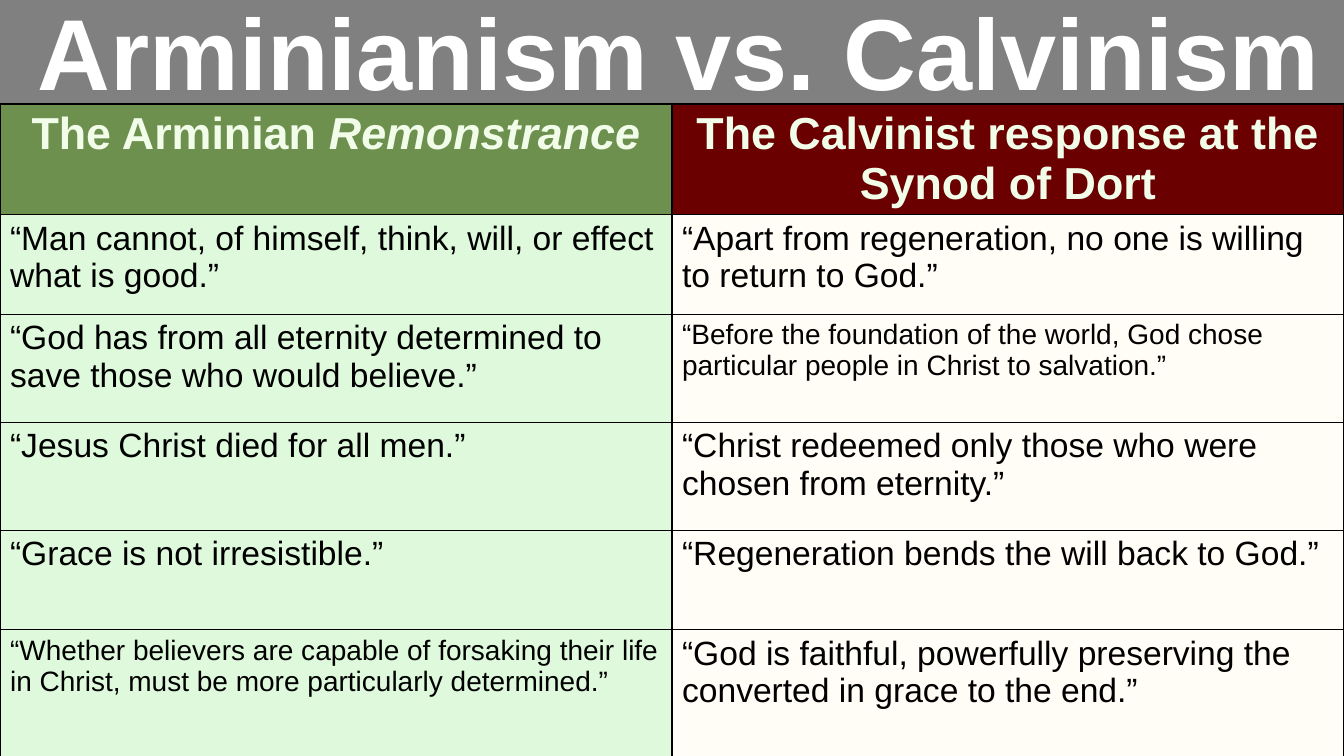
from dataclasses import dataclass

from lxml import etree
from pptx import Presentation
from pptx.dml.color import RGBColor
from pptx.enum import text
from pptx.oxml import ns
from pptx.util import Cm, Pt


@dataclass(frozen=True)
class Theme:
    font: str = "Arial"
    background: str = "808080"
    title_color: str = "FFFFFF"
    header_color: str = "F1FDE9"
    body_color: str = "000000"
    border_color: str = "000000"
    header_fills: tuple[str, str] = ("6D904E", "6B0000")
    body_fills: tuple[str, str] = ("DEF9DB", "FFFDF5")
    title_size: float = 72
    header_size: float = 32
    body_size: float = 24
    small_size: float = 20
    outer_border: float = 2.25
    inner_border: float = 1


@dataclass(frozen=True)
class Statement:
    words: str
    size: float
    emphasis: str = ""  # closing words set in italics


@dataclass(frozen=True)
class Row:
    height: float  # centimetres
    arminian: Statement
    calvinist: Statement


THEME = Theme()
BODY, SMALL = THEME.body_size, THEME.small_size
SLIDE_WIDTH, SLIDE_HEIGHT = Cm(33.87), Cm(19.05)
TABLE_TOP = Cm(2.62)

ROWS = [
    Row(2.79,
        Statement("The Arminian ", THEME.header_size, "Remonstrance"),
        Statement("The Calvinist response at the Synod of Dort", THEME.header_size)),
    Row(2.51,
        Statement("“Man cannot, of himself, think, will, or effect what is good.”", BODY),
        Statement("“Apart from regeneration, no one is willing to return to God.”", BODY)),
    Row(2.72,
        Statement("“God has from all eternity determined to save those who would believe.”", BODY),
        Statement("“Before the foundation of the world, God chose particular people "
                  "in Christ to salvation.”", SMALL)),
    Row(2.72,
        Statement("“Jesus Christ died for all men.”", BODY),
        Statement("“Christ redeemed only those who were chosen from eternity.”", BODY)),
    Row(2.51,
        Statement("“Grace is not irresistible.”", BODY),
        Statement("“Regeneration bends the will back to God.”", BODY)),
    Row(3.53,
        Statement("“Whether believers are capable of forsaking their life in Christ, "
                  "must be more particularly determined.”", SMALL),
        Statement("“God is faithful, powerfully preserving the converted in grace "
                  "to the end.”", BODY)),
]


def format_run(run, size: float, color: str, bold: bool) -> None:
    run.font.name = THEME.font
    run.font.size = Pt(size)
    run.font.bold = bold
    run.font.color.rgb = RGBColor.from_string(color)


def add_text_shadow(run) -> None:
    properties = run.font.fill._xPr
    effects = etree.Element(ns.qn("a:effectLst"))
    shadow = etree.SubElement(effects, ns.qn("a:outerShdw"),
                              dist="50800", dir="2700000", algn="tl")
    etree.SubElement(shadow, ns.qn("a:srgbClr"), val=THEME.border_color)
    properties.find(ns.qn("a:solidFill")).addnext(effects)


def set_borders(cell, widths: dict[str, float]) -> None:
    """Draw cell edges; widths maps L, R, T, B, in that order, to points."""
    properties = cell._tc.get_or_add_tcPr()
    for position, (side, width) in enumerate(widths.items()):
        line = etree.Element(ns.qn(f"a:ln{side}"), w=str(Pt(width)))
        fill = etree.SubElement(line, ns.qn("a:solidFill"))
        etree.SubElement(fill, ns.qn("a:srgbClr"), val=THEME.border_color)
        properties.insert(position, line)


def fill_cell(cell, statement: Statement, fill: str, is_header: bool) -> None:
    cell.fill.solid()
    cell.fill.fore_color.rgb = RGBColor.from_string(fill)
    cell.vertical_anchor = text.MSO_ANCHOR.TOP
    paragraph = cell.text_frame.paragraphs[0]
    paragraph.text = statement.words
    paragraph.alignment = text.PP_ALIGN.CENTER if is_header else text.PP_ALIGN.LEFT
    if statement.emphasis:
        emphasis = paragraph.add_run()
        emphasis.text = statement.emphasis
        emphasis.font.italic = True
    color = THEME.header_color if is_header else THEME.body_color
    for run in paragraph.runs:
        format_run(run, statement.size, color, bold=is_header)


def add_title(slide, words: str) -> None:
    title = slide.shapes.title
    title.left, title.top = Cm(0), Cm(0.38)
    title.width, title.height = SLIDE_WIDTH, Cm(1.75)
    frame = title.text_frame
    frame.text = words
    frame.auto_size = text.MSO_AUTO_SIZE.NONE
    frame.vertical_anchor = text.MSO_ANCHOR.MIDDLE
    frame.margin_left = Cm(0.95)
    paragraph = frame.paragraphs[0]
    paragraph.alignment = text.PP_ALIGN.LEFT
    run = paragraph.runs[0]
    format_run(run, THEME.title_size, THEME.title_color, bold=True)
    add_text_shadow(run)


def add_comparison(slide, rows: list[Row]) -> None:
    height = Cm(sum(row.height for row in rows))
    table = slide.shapes.add_table(len(rows), 2, Cm(0), TABLE_TOP, SLIDE_WIDTH, height).table
    table.first_row = table.horz_banding = False
    outer, inner = THEME.outer_border, THEME.inner_border
    for row_index, row in enumerate(rows):
        table.rows[row_index].height = Cm(row.height)
        is_header = row_index == 0
        is_last = row_index == len(rows) - 1
        fills = THEME.header_fills if is_header else THEME.body_fills
        for column, statement in enumerate((row.arminian, row.calvinist)):
            cell = table.cell(row_index, column)
            fill_cell(cell, statement, fills[column], is_header)
            set_borders(cell, {
                "L": outer if column == 0 else inner,
                "R": outer if column == 1 else inner,
                "T": outer if is_header else inner,
                "B": outer if is_last else inner,
            })


def main() -> None:
    presentation = Presentation()
    presentation.slide_width, presentation.slide_height = SLIDE_WIDTH, SLIDE_HEIGHT
    title_only = presentation.slide_layouts[5]
    slide = presentation.slides.add_slide(title_only)
    slide.background.fill.solid()
    slide.background.fill.fore_color.rgb = RGBColor.from_string(THEME.background)
    add_title(slide, "Arminianism vs. Calvinism")
    add_comparison(slide, ROWS)
    presentation.save("out.pptx")


if __name__ == "__main__":
    main()
